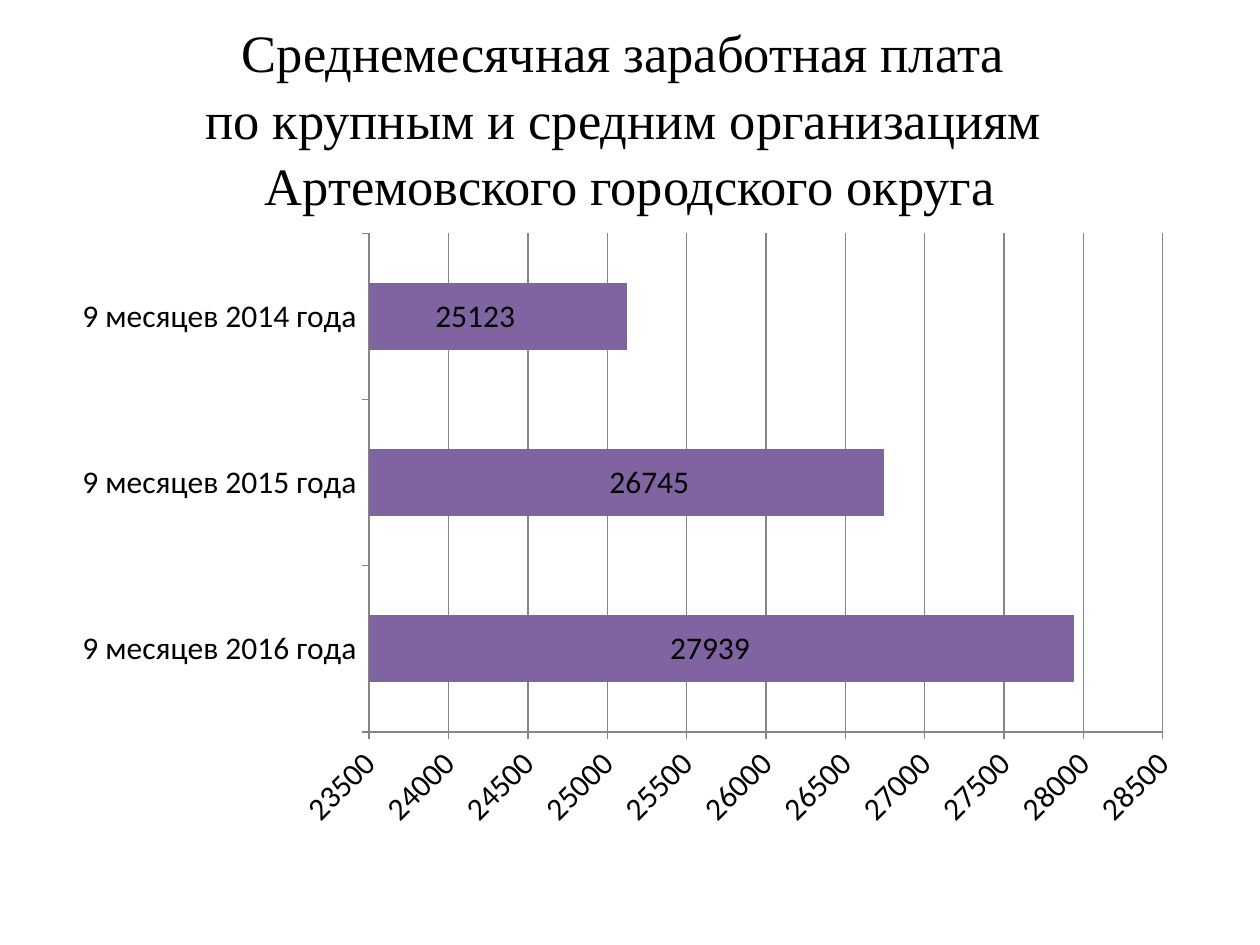
from dataclasses import dataclass

import lxml.etree
import pptx
import pptx.chart.data
import pptx.dml.color
import pptx.enum.chart
import pptx.enum.text
import pptx.oxml.ns
import pptx.util

Cm = pptx.util.Cm
Pt = pptx.util.Pt
qn = pptx.oxml.ns.qn


@dataclass(frozen=True)
class Theme:
    ink: str = "000000"
    bar: str = "8064A2"
    rule: str = "868686"
    title_font: str = "Times New Roman"
    chart_font: str = "Calibri"
    title_size: float = 30
    chart_size: float = 18


@dataclass(frozen=True)
class Box:
    left: float
    top: float
    width: float
    height: float

    def lengths(self) -> tuple:
        return Cm(self.left), Cm(self.top), Cm(self.width), Cm(self.height)


@dataclass(frozen=True)
class Wage:
    period: str
    roubles: int
    label_dx: float


THEME = Theme()
TITLE_BOX = Box(1.27, 0.76, 22.86, 3.18)
CHART_BOX = Box(1.27, 4.45, 22.86, 12.57)
PLOT = {"x": 0.27, "y": 0.02, "w": 0.7, "h": 0.8}
TITLE = (
    "Среднемесячная заработная плата \v"
    "по крупным и средним организациям \v"
    "Артемовского городского округа"
)
WAGES = [
    Wage("9 месяцев 2016 года", 27939, -0.01),
    Wage("9 месяцев 2015 года", 26745, 0.02),
    Wage("9 месяцев 2014 года", 25123, -0.02),
]


def colour(value: str) -> pptx.dml.color.RGBColor:
    return pptx.dml.color.RGBColor.from_string(value)


def style_font(font, *, name: str, size: float, ink: str) -> None:
    font.name = name
    font.size = Pt(size)
    font.bold = False
    font.color.rgb = colour(ink)


def add_text(slide, box: Box, text: str, *, font: str, size: float, ink: str,
             spacing: float = 1.0) -> None:
    frame = slide.shapes.add_textbox(*box.lengths()).text_frame
    frame.word_wrap = True
    frame.vertical_anchor = pptx.enum.text.MSO_ANCHOR.MIDDLE
    paragraph = frame.paragraphs[0]
    paragraph.text = text
    paragraph.alignment = pptx.enum.text.PP_ALIGN.CENTER
    paragraph.line_spacing = spacing
    for run in paragraph.runs:
        style_font(run.font, name=font, size=size, ink=ink)


def manual_layout(settings: dict):
    layout = lxml.etree.Element(qn("c:layout"))
    manual = lxml.etree.SubElement(layout, qn("c:manualLayout"))
    for tag, value in settings.items():
        lxml.etree.SubElement(manual, qn(f"c:{tag}")).set("val", str(value))
    return layout


def place_plot(chart) -> None:
    area = chart.plots[0]._element.getparent()
    for old in area.findall(qn("c:layout")):
        area.remove(old)
    modes = {"layoutTarget": "inner", "xMode": "edge", "yMode": "edge"}
    area.insert(0, manual_layout(modes | PLOT))


def style_axis(axis) -> None:
    axis.major_tick_mark = pptx.enum.chart.XL_TICK_MARK.OUTSIDE
    axis.minor_tick_mark = pptx.enum.chart.XL_TICK_MARK.NONE
    axis.format.line.color.rgb = colour(THEME.rule)
    axis.format.line.width = Pt(0.75)
    style_font(axis.tick_labels.font, name=THEME.chart_font,
               size=THEME.chart_size, ink=THEME.ink)


def label_bar(series, index: int, wage: Wage) -> None:
    label = series.points[index].data_label
    style_font(label.font, name=THEME.chart_font,
               size=THEME.chart_size, ink=THEME.ink)
    label.position = pptx.enum.chart.XL_LABEL_POSITION.CENTER
    entry = series._element.find(qn("c:dLbls")).findall(qn("c:dLbl"))[index]
    entry.insert(1, manual_layout({"x": wage.label_dx, "y": 0}))


def add_wage_chart(slide, box: Box, wages: list[Wage]) -> None:
    data = pptx.chart.data.CategoryChartData(number_format="General")
    data.categories = [wage.period for wage in wages]
    data.add_series("Series 1", [wage.roubles for wage in wages])
    chart = slide.shapes.add_chart(
        pptx.enum.chart.XL_CHART_TYPE.BAR_CLUSTERED, *box.lengths(), data
    ).chart
    chart.has_legend = False
    chart.has_title = False
    style_font(chart.font, name=THEME.chart_font,
               size=THEME.chart_size, ink=THEME.ink)
    place_plot(chart)

    plot = chart.plots[0]
    plot.gap_width = 150
    plot.vary_by_categories = False
    bars = plot.series[0]
    bars.format.fill.solid()
    bars.format.fill.fore_color.rgb = colour(THEME.bar)
    bars.data_labels.show_value = True
    for index, wage in enumerate(wages):
        label_bar(bars, index, wage)

    roubles = chart.value_axis
    for axis in (chart.category_axis, roubles):
        style_axis(axis)
    roubles.minimum_scale, roubles.maximum_scale = 23500, 28500
    roubles.major_unit = 500
    roubles.has_major_gridlines = True
    roubles.major_gridlines.format.line.color.rgb = colour(THEME.rule)
    roubles.major_gridlines.format.line.width = Pt(0.75)
    tilt = roubles._element.find(qn("c:txPr")).find(qn("a:bodyPr"))
    tilt.set("rot", str(-45 * 60000))
    tilt.set("vert", "horz")


def main() -> None:
    deck = pptx.Presentation()
    deck.slide_width, deck.slide_height = Cm(25.4), Cm(19.05)
    slide = deck.slides.add_slide(deck.slide_layouts[6])
    add_text(slide, TITLE_BOX, TITLE, font=THEME.title_font,
             size=THEME.title_size, ink=THEME.ink, spacing=1.05)
    add_wage_chart(slide, CHART_BOX, WAGES)
    deck.save("out.pptx")


if __name__ == "__main__":
    main()
